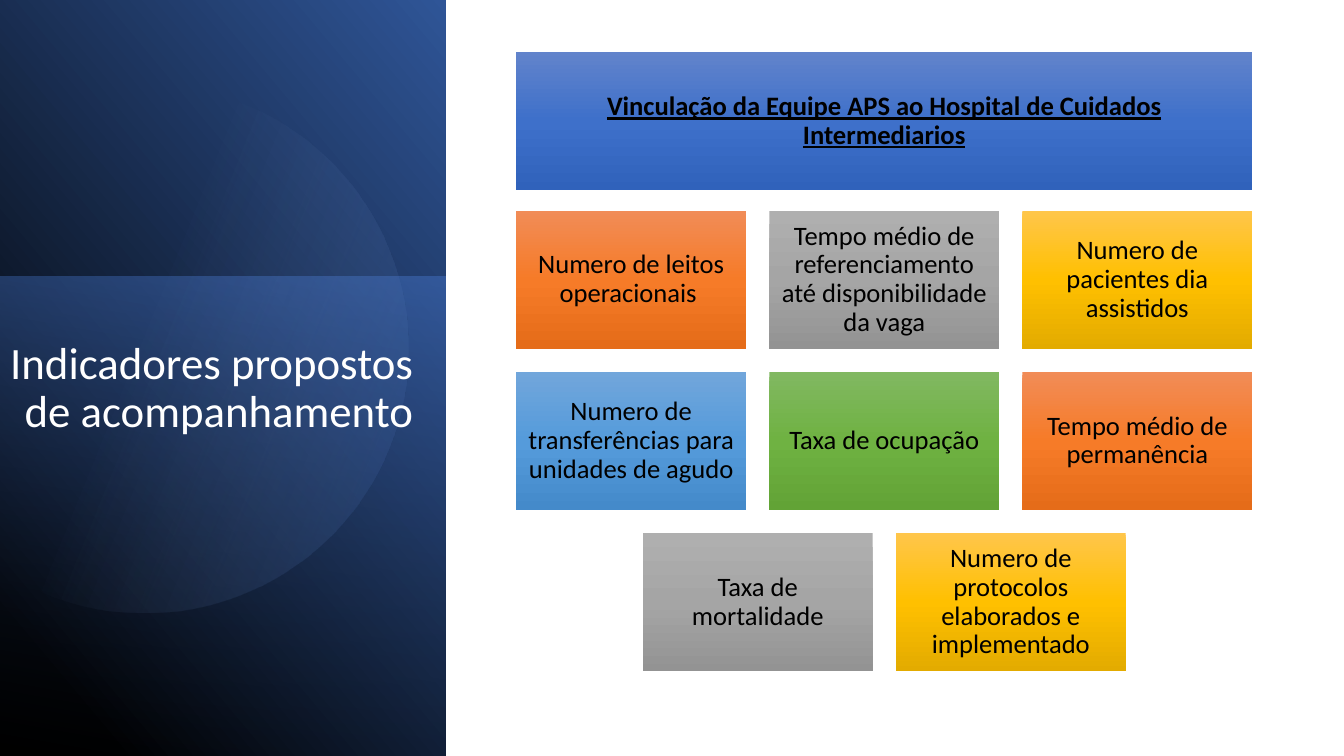
from dataclasses import dataclass
from math import acos, cos, sin

from lxml import etree
from pptx import Presentation
from pptx.dml.color import RGBColor
from pptx.enum.shapes import MSO_SHAPE
from pptx.enum.text import MSO_ANCHOR, PP_ALIGN
from pptx.oxml.ns import qn
from pptx.util import Inches, Pt

RECT = MSO_SHAPE.RECTANGLE
MIDDLE = MSO_ANCHOR.MIDDLE
CENTER, RIGHT = PP_ALIGN.CENTER, PP_ALIGN.RIGHT


@dataclass(frozen=True)
class Theme:
    """Gradient stops are (position %, colour, opacity %)."""
    font: str = "Calibri"
    title: int = 32
    body: int = 19
    light: str = "FFFFFF"
    dark: str = "000000"
    panel: tuple = ((11, "000000", 100), (100, "2F5597", 100))
    veil: tuple = ((0, "4472C4", 50), (100, "203864", 0))
    disc: tuple = ((39, "8FAADC", 0), (100, "2F5597", 26))
    blue: tuple = ("6183CB", "3E70CA", "3062BB")
    orange: tuple = ("F18C57", "F67B28", "E56C19")
    gray: tuple = ("AFAFAF", "A5A5A5", "939393")
    gold: tuple = ("FFC64B", "FFC000", "E3AB00")
    sky: tuple = ("71A6DB", "559BDB", "448ACA")
    green: tuple = ("81B861", "6FB242", "62A336")


THEME = Theme()
LEFT, WIDTH = 5.12, 7.3
CARD_W, CARD_H, GAP = 2.28, 1.37, 0.23
HEAD_TOP, GRID_TOP = 0.52, 2.09

HEAD = "Vinculação da Equipe APS ao Hospital de Cuidados Intermediarios"
ROWS = (
    (("Numero de leitos operacionais ", THEME.orange),
     ("Tempo médio de referenciamento até disponibilidade da vaga", THEME.gray),
     ("Numero de pacientes dia assistidos", THEME.gold)),
    (("Numero de transferências para unidades de agudo", THEME.sky),
     ("Taxa de ocupação", THEME.green),
     ("Tempo médio de permanência", THEME.orange)),
    (("Taxa de mortalidade", THEME.gray),
     ("Numero de protocolos elaborados e implementado", THEME.gold)),
)


def shade(shape, stops, angle):
    """Give a shape a linear gradient and no line or shadow."""
    shape.shadow.inherit = False
    shape.line.fill.background()
    shape.fill.background()
    grad = etree.Element(qn("a:gradFill"), rotWithShape="1")
    items = etree.SubElement(grad, qn("a:gsLst"))
    for pos, color, alpha in stops:
        stop = etree.SubElement(items, qn("a:gs"), pos=str(pos * 1000))
        rgb = etree.SubElement(stop, qn("a:srgbClr"), val=color)
        if alpha < 100:
            etree.SubElement(rgb, qn("a:alpha"), val=str(alpha * 1000))
    etree.SubElement(grad, qn("a:lin"), ang=str(angle * 60000), scaled="0")
    props = shape.element.spPr
    props.replace(props.find(qn("a:noFill")), grad)


def add_rect(slide, box, stops, angle):
    shape = slide.shapes.add_shape(RECT, *map(Inches, box))
    shade(shape, stops, angle)
    return shape


def write(shape, text, size, color, align):
    frame = shape.text_frame
    frame.word_wrap = True
    para = frame.paragraphs[0]
    para.text = text
    para.alignment = align
    para.line_spacing = 0.9
    font = para.font
    font.name, font.size = THEME.font, Pt(size)
    font.color.rgb = RGBColor.from_string(color)
    return frame


def add_card(slide, box, text, colors):
    stops = [(pos, color, 100) for pos, color in zip((0, 50, 100), colors)]
    card = add_rect(slide, box, stops, 90)
    frame = write(card, text, THEME.body, THEME.dark, CENTER)
    frame.vertical_anchor = MIDDLE
    frame.margin_left = frame.margin_right = Inches(0.08)
    frame.margin_top = frame.margin_bottom = Inches(0.08)
    return frame.paragraphs[0].font


def add_disc(slide):
    """Draw a circle cut straight where it meets the slide's left edge."""
    x, y, radius, steps = 1.43, 3.46, 2.62, 90
    limit = acos(-x / radius)
    turns = [limit * (2 * i / steps - 1) for i in range(steps + 1)]
    points = [(Inches(x + radius * cos(t)), Inches(y + radius * sin(t)))
              for t in turns]
    outline = slide.shapes.build_freeform(*points[0])
    outline.add_line_segments(points[1:], close=True)
    shade(outline.convert_to_shape(), THEME.disc, 22)


def add_panel(slide):
    panel = add_rect(slide, (-1.55, 1.55, 7.52, 4.42), THEME.panel, 310)
    panel.rotation = 90
    panel.element.spPr.xfrm.set("flipH", "1")
    veil = add_rect(slide, (-0.17, 2.91, 4.76, 4.42), THEME.veil, 190)
    veil.rotation = 270
    add_disc(slide)
    title = slide.shapes.add_textbox(*map(Inches, (0, 3.33, 4.2, 3.76)))
    write(title, "Indicadores propostos de acompanhamento",
          THEME.title, THEME.light, RIGHT)


def add_grid(slide):
    """Set out the cards in rows, each centred under the heading."""
    for i, row in enumerate(ROWS):
        span = len(row) * (CARD_W + GAP) - GAP
        start = LEFT + (WIDTH - span) / 2
        top = GRID_TOP + i * (CARD_H + GAP)
        for j, (text, colors) in enumerate(row):
            left = start + j * (CARD_W + GAP)
            add_card(slide, (left, top, CARD_W, CARD_H), text, colors)


def main():
    deck = Presentation()
    deck.slide_width, deck.slide_height = Inches(13.33), Inches(7.5)
    slide = deck.slides.add_slide(deck.slide_layouts[6])
    add_panel(slide)
    add_grid(slide)
    font = add_card(slide, (LEFT, HEAD_TOP, WIDTH, CARD_H), HEAD, THEME.blue)
    font.bold = font.underline = True
    deck.save("out.pptx")


if __name__ == "__main__":
    main()
